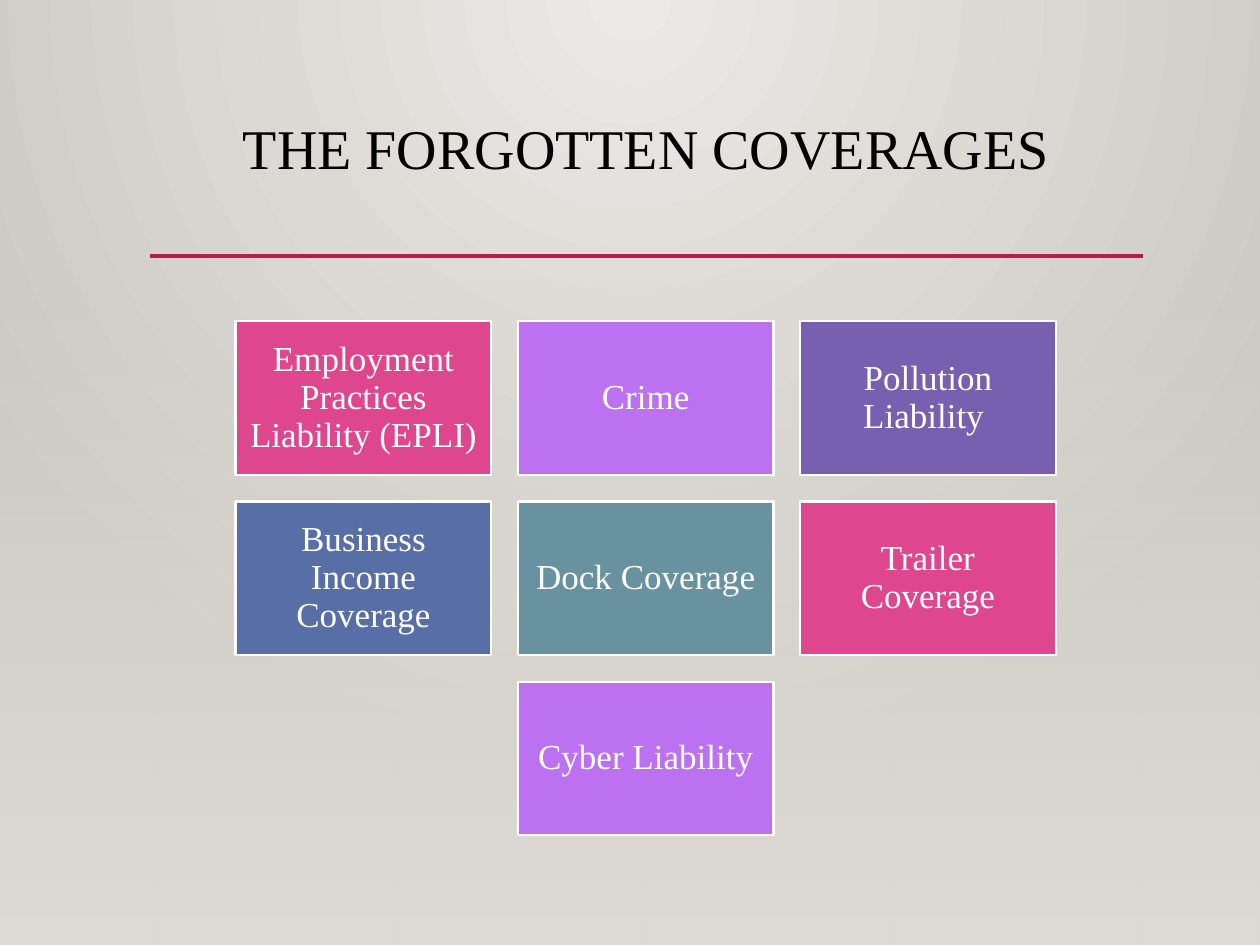
"""Build the slide on forgotten insurance coverages."""
from dataclasses import dataclass

import pptx
import pptx.dml.color
import pptx.enum.shapes
import pptx.enum.text
import pptx.oxml
import pptx.oxml.ns
import pptx.util
from pptx.util import Inches

FONT = "Times New Roman"
PINK, ORCHID, PURPLE, BLUE, TEAL = "DE478E", "BC72F0", "795FAF", "586EA6", "6892A0"
TILE_WIDTH, TILE_HEIGHT, GAP = 2.03, 1.22, 0.21
GRID_LEFT, GRID_TOP = 1.87, 2.55
RADIAL = '<a:path path="circle"><a:fillToRect l="43000" r="43000" b="100000"/></a:path>'
DOWNWARD = '<a:lin ang="5400000" scaled="0"/>'


@dataclass
class Coverage:
    name: str
    color: str
    column: int
    row: int


COVERAGES = [
    Coverage("Employment Practices Liability (EPLI)", PINK, 0, 0),
    Coverage("Crime", ORCHID, 1, 0),
    Coverage("Pollution Liability ", PURPLE, 2, 0),
    Coverage("Business Income Coverage", BLUE, 0, 1),
    Coverage("Dock Coverage", TEAL, 1, 1),
    Coverage("Trailer Coverage", PINK, 2, 1),
    Coverage("Cyber Liability", ORCHID, 1, 2),
]


def rgb(value: str) -> pptx.dml.color.RGBColor:
    return pptx.dml.color.RGBColor.from_string(value)


def write_text(shape, text: str, *, size: float, color: str, anchor: str, inset: float) -> None:
    frame = shape.text_frame
    frame.word_wrap = True
    frame.auto_size = pptx.enum.text.MSO_AUTO_SIZE.NONE
    frame.vertical_anchor = pptx.enum.text.MSO_ANCHOR[anchor]
    frame.margin_left = frame.margin_right = Inches(inset)
    frame.margin_top = frame.margin_bottom = Inches(min(inset, 0.08))
    para = frame.paragraphs[0]
    para.alignment = pptx.enum.text.PP_ALIGN.CENTER
    para.line_spacing = 0.9
    span = para.add_run()
    span.text = text
    span.font.name = FONT
    span.font.size = pptx.util.Pt(size)
    span.font.color.rgb = rgb(color)


def set_gradient(fill, owner, start: str, end: str, shading: str, start_alpha: int = 100) -> None:
    fill.gradient()
    old = owner.find(".//" + pptx.oxml.ns.qn("a:gradFill"))
    new = pptx.oxml.parse_xml(
        f'<a:gradFill {pptx.oxml.ns.nsdecls("a")} rotWithShape="1"><a:gsLst>'
        f'<a:gs pos="0"><a:srgbClr val="{start}"><a:alpha val="{start_alpha * 1000}"/></a:srgbClr></a:gs>'
        f'<a:gs pos="100000"><a:srgbClr val="{end}"/></a:gs>'
        f"</a:gsLst>{shading}</a:gradFill>"
    )
    old.getparent().replace(old, new)


def add_rectangle(page, left: float, top: float, width: float, height: float):
    box = page.shapes.add_shape(
        pptx.enum.shapes.MSO_SHAPE.RECTANGLE,
        Inches(left), Inches(top), Inches(width), Inches(height),
    )
    box.shadow.inherit = False
    return box


def add_title(page, text: str) -> None:
    title = page.shapes.title
    title.left, title.top = Inches(1.19), Inches(0.88)
    title.width, title.height = Inches(7.88), Inches(1.15)
    write_text(title, text, size=32, color="000000", anchor="TOP", inset=0.1)


def add_rule(page) -> None:
    rule = page.shapes.add_connector(
        pptx.enum.shapes.MSO_CONNECTOR.STRAIGHT,
        Inches(1.19), Inches(2.03), Inches(9.07), Inches(2.03),
    )
    rule.line.color.rgb = rgb("B71E42")
    rule.line.width = pptx.util.Pt(2.5)
    properties = rule._element.spPr
    properties.append(properties.makeelement(pptx.oxml.ns.qn("a:effectLst"), {}))


def add_fade(page) -> None:
    fade = add_rectangle(page, 0, 2.21, 10, 5.29)
    fade.line.fill.background()
    set_gradient(fade.fill, fade._element, "DFDBD5", "DFDBD5", DOWNWARD, start_alpha=0)


def add_tile(page, coverage: Coverage) -> None:
    left = GRID_LEFT + coverage.column * (TILE_WIDTH + GAP)
    top = GRID_TOP + coverage.row * (TILE_HEIGHT + GAP)
    tile = add_rectangle(page, left, top, TILE_WIDTH, TILE_HEIGHT)
    tile.fill.solid()
    tile.fill.fore_color.rgb = rgb(coverage.color)
    tile.line.color.rgb = rgb("FFFFFF")
    tile.line.width = pptx.util.Pt(1.25)
    write_text(tile, coverage.name, size=20, color="FFFFFF", anchor="MIDDLE", inset=0.08)


def main() -> None:
    deck = pptx.Presentation()
    deck.slide_width, deck.slide_height = Inches(10), Inches(7.5)
    page = deck.slides.add_slide(deck.slide_layouts.get_by_name("Title Only"))
    set_gradient(page.background.fill, page._element, "ECEAE7", "CAC7C1", RADIAL)
    add_title(page, "THE FORGOTTEN COVERAGES")
    add_rule(page)
    add_fade(page)
    for coverage in COVERAGES:
        add_tile(page, coverage)
    deck.save("out.pptx")


if __name__ == "__main__":
    main()
